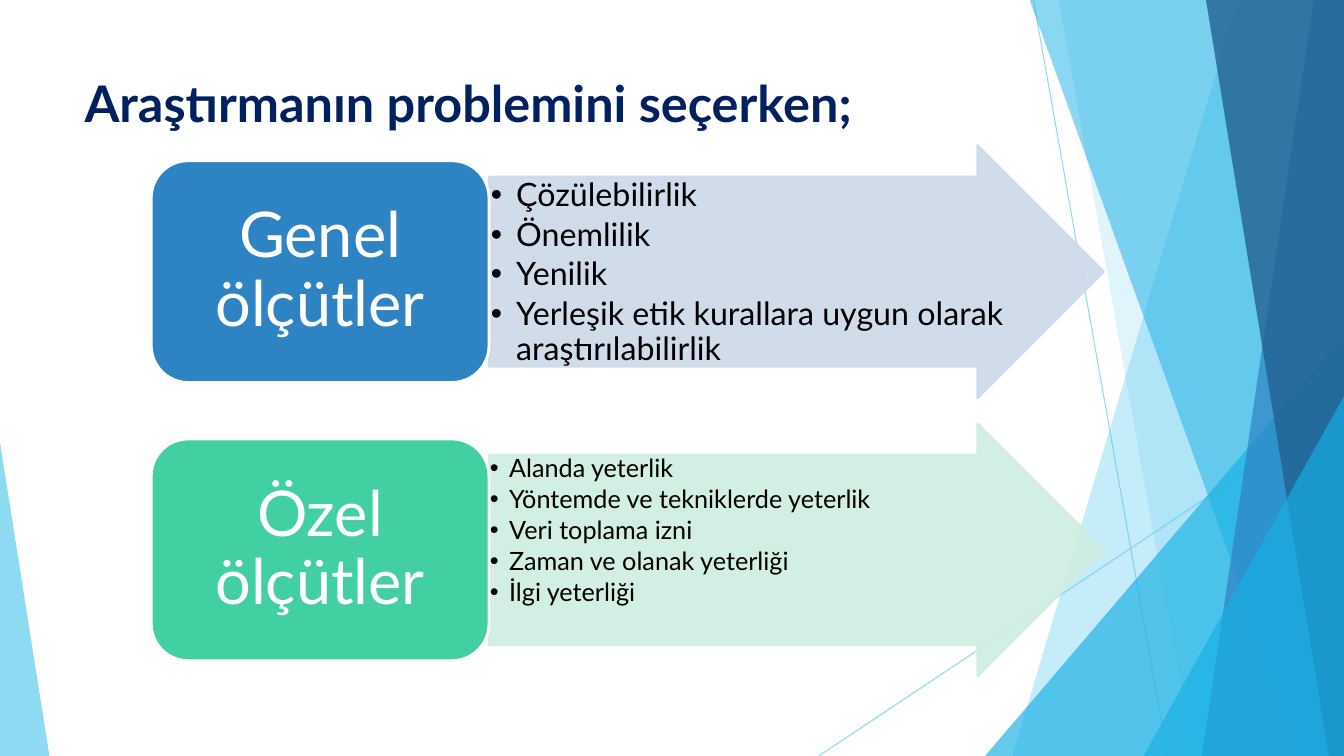
from lxml.etree import SubElement
from pptx import Presentation
from pptx.dml.color import RGBColor
from pptx.enum.shapes import MSO_CONNECTOR, MSO_SHAPE
from pptx.enum.text import MSO_ANCHOR, PP_ALIGN
from pptx.oxml.ns import qn
from pptx.util import Inches, Pt

W, H = 13.33, 7.5
FONT = "Lato"


def paint(fill, color, alpha=100):
    """Fill with a solid hex colour at the given opacity percentage."""
    fill.solid()
    fill.fore_color.rgb = RGBColor.from_string(color)
    if alpha < 100:
        for clr in fill._xPr.iter(qn("a:srgbClr")):
            SubElement(clr, qn("a:alpha"), val=str(alpha * 1000))


def outline(line, color, width, alpha=100):
    """Give a line its colour, width in points and opacity."""
    line.width = Pt(width)
    paint(line.fill, color, alpha)


def add_preset(s, kind, box, adjustments=()):
    """Add a preset shape without shadow in the box given in inches."""
    sp = s.shapes.add_shape(kind, *map(Inches, box))
    sp.shadow.inherit = False
    for i, value in enumerate(adjustments):
        sp.adjustments[i] = value
    return sp


def set_frame(tf, inset_x, inset_y, anchor):
    """Set wrapping, insets in inches and vertical anchor."""
    frame = {"word_wrap": True, "vertical_anchor": anchor,
             "margin_left": Inches(inset_x), "margin_right": Inches(inset_x),
             "margin_top": Inches(inset_y), "margin_bottom": Inches(inset_y)}
    for name, value in frame.items():
        setattr(tf, name, value)


def write(p, text, size, color, bold=False):
    """Add one formatted run to a paragraph."""
    r = p.add_run()
    r.text = text
    for name, value in {"name": FONT, "size": Pt(size), "bold": bold}.items():
        setattr(r.font, name, value)
    r.font.color.rgb = RGBColor.from_string(color)


def add_bullet(p, indent):
    """Give a paragraph a round bullet with a hanging indent in inches."""
    pPr = p._p.get_or_add_pPr()
    pPr.set("marL", str(Inches(indent)))
    pPr.set("indent", str(-Inches(indent)))
    SubElement(pPr, qn("a:buFont"), typeface="Arial")
    SubElement(pPr, qn("a:buChar"), char="•")


def add_facets(s):
    """Draw the thin lines and translucent facets along the slide edges."""
    for ends in [(10.25, 0, 11.58, H), (W, 4.03, 8.12, H)]:
        line = s.shapes.add_connector(MSO_CONNECTOR.STRAIGHT, *map(Inches, ends))
        outline(line.line, "5FCBEF", 0.75, 70)
        SubElement(line._element.spPr, qn("a:effectLst"))

    def band(top_x, bottom_x, color, alpha):
        """Fill from a slanted edge to the right side of the slide."""
        points = [(W, -0.01), (W, H), (bottom_x, H)]
        builder = s.shapes.build_freeform(Inches(top_x), Inches(-0.01))
        builder.add_line_segments([(Inches(x), Inches(y)) for x, y in points])
        sp = builder.convert_to_shape()
        sp.shadow.inherit = False
        paint(sp.fill, color, alpha)
        sp.line.fill.background()

    def corner(left, top, width, apex, color, alpha):
        """Stand a right-angled triangle on the bottom edge."""
        sp = add_preset(s, MSO_SHAPE.ISOSCELES_TRIANGLE,
                        (left, top, width, H - top), [apex])
        paint(sp.fill, color, alpha)
        sp.line.fill.background()

    band(12.28, 10.04, "5FCBEF", 36)
    band(10.5, 11.83, "5FCBEF", 20)
    corner(9.77, 3.33, 3.56, 1, "17B0E4", 66)
    band(10.21, 12.91, "17B0E4", 50)
    band(13.03, 11.92, "2E83C3", 70)
    band(11.96, 13.18, "226292", 80)
    corner(11.34, 3.93, 1.99, 1, "17B0E4", 66)
    corner(0, 4.39, 0.49, 0, "5FCBEF", 70)


def add_title(s, box, text):
    """Place the slide title in its box."""
    tf = s.shapes.add_textbox(*map(Inches, box)).text_frame
    set_frame(tf, 0.1, 0.05, MSO_ANCHOR.TOP)
    write(tf.paragraphs[0], text, 36, "002060", True)


def add_criteria(s, box, label, items, colors, size, indent, inset):
    """Draw a label block with an arrow holding its bulleted criteria."""
    left, top, width, height = box
    label_w, label_h = 3.35, 2.2
    label_color, arrow_color = colors

    arrow = add_preset(s, MSO_SHAPE.RIGHT_ARROW,
                       (left + label_w, top, width - label_w, height), [0.75, 0.5])
    paint(arrow.fill, arrow_color, 90)
    outline(arrow.line, arrow_color, 1.5, 90)
    tf = arrow.text_frame
    set_frame(tf, inset, inset, MSO_ANCHOR.TOP)
    for i, item in enumerate(items):
        p = tf.add_paragraph() if i else tf.paragraphs[0]
        spacing = {"alignment": PP_ALIGN.LEFT, "line_spacing": 0.9,
                   "space_after": Pt(0.15 * size)}
        for name, value in spacing.items():
            setattr(p, name, value)
        add_bullet(p, indent)
        write(p, item, size, "000000")

    block = add_preset(s, MSO_SHAPE.ROUNDED_RECTANGLE,
                       (left, top + (height - label_h) / 2, label_w, label_h))
    paint(block.fill, label_color)
    outline(block.line, "FFFFFF", 2)
    set_frame(block.text_frame, 0.19, 0.09, MSO_ANCHOR.MIDDLE)
    p = block.text_frame.paragraphs[0]
    p.alignment, p.line_spacing = PP_ALIGN.CENTER, 0.9
    p.space_after = Pt(0.35 * 45)
    write(p, label, 45, "FFFFFF")


def main():
    """Build the slide and save it."""
    prs = Presentation()
    prs.slide_width, prs.slide_height = Inches(W), Inches(H)
    s = prs.slides.add_slide(prs.slide_layouts[6])
    add_facets(s)
    add_title(s, (0.74, 0.67, 9.4, 1.44), "Araştırmanın problemini seçerken;")
    rows = [
        ("Genel ölçütler",
         ["Çözülebilirlik", "Önemlilik", "Yenilik",
          "Yerleşik etik kurallara uygun olarak araştırılabilirlik"],
         ("2E83C3", "CDD9E9"), 23, 0.25, 0.02),
        ("Özel ölçütler",
         ["Alanda yeterlik", "Yöntemde ve tekniklerde yeterlik",
          "Veri toplama izni", "Zaman ve olanak yeterliği", "İlgi yeterliği"],
         ("42D0A2", "CFEEE0"), 18, 0.19, 0.01),
    ]
    for i, row in enumerate(rows):
        add_criteria(s, (1.5, 1.44 + 2.76 * i, 9.45, 2.51), *row)
    prs.save("out.pptx")


if __name__ == "__main__":
    main()
